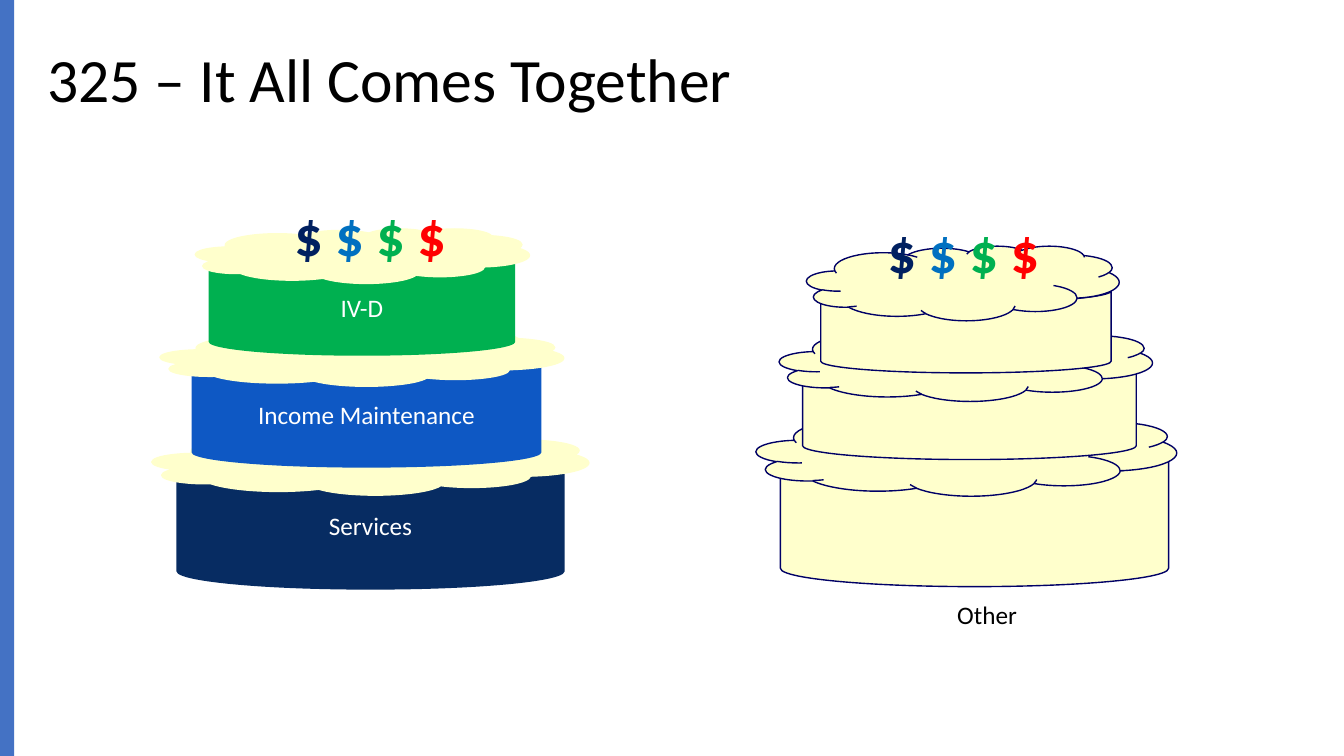
from pptx import Presentation
from pptx.dml.color import RGBColor
from pptx.enum.shapes import MSO_SHAPE as SHAPE
from pptx.enum.text import MSO_ANCHOR as ANCHOR, MSO_AUTO_SIZE as AUTO, PP_ALIGN as ALIGN
from pptx.util import Inches, Pt

BLACK = RGBColor(0x00, 0x00, 0x00)
WHITE = RGBColor(0xFF, 0xFF, 0xFF)
BAR_BLUE = RGBColor(0x44, 0x72, 0xC4)
CREAM = RGBColor(0xFF, 0xFF, 0xCC)
OUTLINE = RGBColor(0x00, 0x00, 0x66)
SERVICES = RGBColor(0x07, 0x2C, 0x62)
INCOME = RGBColor(0x0E, 0x58, 0xC4)
IV_D = RGBColor(0x00, 0xB0, 0x50)
DOLLARS = [RGBColor(0x00, 0x20, 0x60), RGBColor(0x00, 0x70, 0xC0),
           RGBColor(0x00, 0xB0, 0x50), RGBColor(0xFF, 0x00, 0x00)]

prs = Presentation()
prs.slide_width, prs.slide_height = Inches(13.33), Inches(7.5)
s = prs.slides.add_slide(prs.slide_layouts[5])


def add_shape(kind, box, fill, line=None):
    sp = s.shapes.add_shape(kind, *map(Inches, box))
    sp.shadow.inherit = False
    sp.fill.solid()
    sp.fill.fore_color.rgb = fill
    if line is None:
        sp.line.fill.background()
    else:
        sp.line.color.rgb = line
        sp.line.width = Pt(1)
    return sp


def style(r, size, color, bold=False):
    r.font.name = "Calibri"
    r.font.size = Pt(size)
    r.font.color.rgb = color
    r.font.bold = bold


add_shape(SHAPE.RECTANGLE, (0, 0, 0.14, 7.5), BAR_BLUE)

title = s.shapes.title
title.left, title.top = Inches(0.37), Inches(0.12)
title.width, title.height = Inches(12.67), Inches(1.4)
tf = title.text_frame
tf.text = "325 – It All Comes Together"
tf.auto_size = AUTO.NONE
tf.vertical_anchor = ANCHOR.MIDDLE
p = tf.paragraphs[0]
p.alignment = ALIGN.LEFT
p.line_spacing = 0.9
style(p.runs[0], 44, BLACK)

# Each cake: line colours of layer and icing, layers from the bottom up, box of the dollar signs
cakes = [
    (None, CREAM, [
        ("Services", SERVICES, (1.75, 4.4, 3.85, 1.45), (1.51, 4.29, 4.33, 0.62)),
        ("Income Maintenance", INCOME, (1.9, 3.43, 3.47, 1.21), (1.59, 3.29, 4, 0.54)),
        ("IV-D", IV_D, (2.07, 2.43, 3.04, 1.1), (1.94, 2.27, 3.31, 0.54)),
    ], (2.73, 1.89, 1.88, 0.79)),
    (OUTLINE, OUTLINE, [
        ("", CREAM, (7.74, 4.37, 3.85, 1.45), (7.5, 4.09, 4.17, 0.83)),
        ("", CREAM, (7.96, 3.46, 3.31, 1.1), (7.73, 3.24, 3.7, 0.74)),
        ("", CREAM, (8.14, 2.77, 2.88, 0.93), (8, 2.44, 3.1, 0.74)),
    ], (8.65, 2.06, 1.81, 0.79)),
]

for layer_line, icing_line, layers, dollar_box in cakes:
    for label, fill, layer_box, icing_box in layers:
        layer = add_shape(SHAPE.CAN, layer_box, fill, layer_line)
        if label:
            tf = layer.text_frame
            tf.text = label
            tf.vertical_anchor = ANCHOR.MIDDLE
            p = tf.paragraphs[0]
            p.alignment = ALIGN.CENTER
            style(p.runs[0], 18, WHITE)
        add_shape(SHAPE.CLOUD, icing_box, CREAM, icing_line)

    tf = s.shapes.add_textbox(*map(Inches, dollar_box)).text_frame
    tf.word_wrap = True
    tf.auto_size = AUTO.SHAPE_TO_FIT_TEXT
    p = tf.paragraphs[0]
    p.alignment = ALIGN.CENTER
    p.line_spacing = 1.07
    p.space_after = Pt(8)
    for color in DOLLARS:
        r = p.add_run()
        r.text = "$" if color == DOLLARS[-1] else "$ "
        style(r, 40, color, bold=True)

tf = s.shapes.add_textbox(Inches(8.65), Inches(5.9), Inches(2.28), Inches(0.4)).text_frame
tf.text = "Other"
tf.word_wrap = True
tf.auto_size = AUTO.SHAPE_TO_FIT_TEXT
p = tf.paragraphs[0]
p.alignment = ALIGN.CENTER
style(p.runs[0], 18, BLACK)

prs.save("out.pptx")
